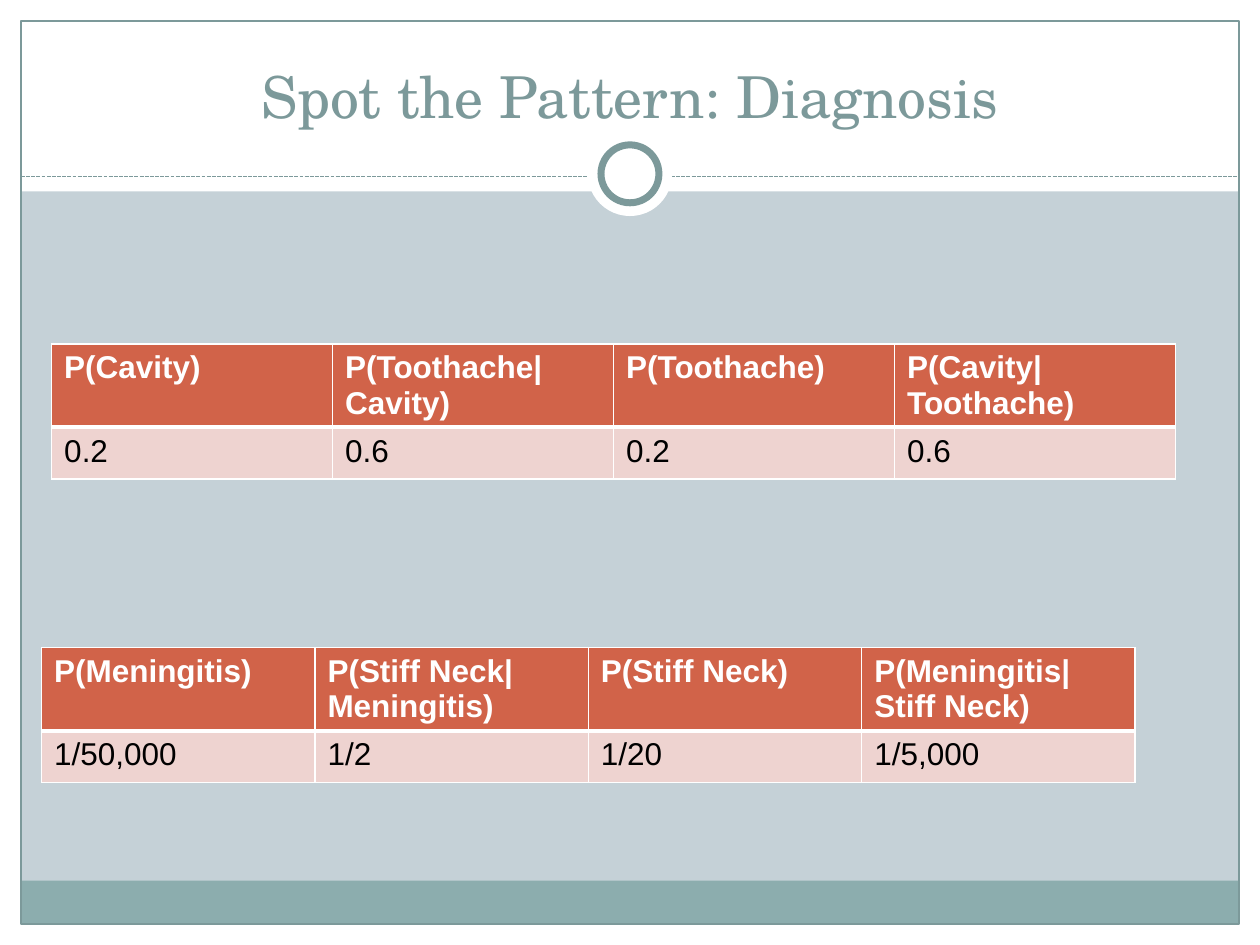
import pptx
import pptx.util
import pptx.dml.color
import pptx.enum.dml
import pptx.enum.shapes
import pptx.enum.text
import pptx.oxml
import pptx.oxml.ns

RGB = pptx.dml.color.RGBColor
WHITE = RGB(0xFF, 0xFF, 0xFF)
BLACK = RGB(0, 0, 0)
MIST = RGB(0xC5, 0xD1, 0xD7)
TEAL = RGB(0x8C, 0xAD, 0xAE)
SLATE = RGB(0x7C, 0x99, 0x9A)
RUST = RGB(0xD1, 0x63, 0x49)
BLUSH = RGB(0xEE, 0xD3, 0xD0)
Inches, Pt = pptx.util.Inches, pptx.util.Pt
KIND = pptx.enum.shapes.MSO_SHAPE
W, H = 10, 7.5
EDGE = W / 60

deck = pptx.Presentation()
deck.slide_width, deck.slide_height = Inches(W), Inches(H)
slide = deck.slides.add_slide(deck.slide_layouts[5])
slide.background.fill.solid()
slide.background.fill.fore_color.rgb = MIST


def draw(kind, box, fill=None, line=None, width=0.75):
    shape = slide.shapes.add_shape(kind, *map(Inches, box))
    shape.shadow.inherit = False
    for part, color in ((shape.fill, fill), (shape.line.fill, line)):
        if color is None:
            part.background()
        else:
            part.solid()
            part.fore_color.rgb = color
    if line is not None:
        shape.line.width = Pt(width)


def style(font, form):
    for key, value in form.items():
        if key == "color":
            font.color.rgb = value
        else:
            setattr(font, key, value)


# White margins, footer band and frame
for box, color in (
    ((0, H - EDGE, W, EDGE), WHITE),
    ((0, 0, W, 1.52), WHITE),
    ((0, 0, EDGE, H), WHITE),
    ((W - EDGE, 0, EDGE, H), WHITE),
    ((EDGE, 6.99, W - 2 * EDGE, 0.34), TEAL),
):
    draw(KIND.RECTANGLE, box, color)
draw(KIND.RECTANGLE, (EDGE, EDGE, W - 2 * EDGE, H - 2 * EDGE), line=SLATE)

# Dashed rule
rule = slide.shapes.add_connector(
    pptx.enum.shapes.MSO_CONNECTOR.STRAIGHT,
    *map(Inches, (EDGE, 1.4, W - EDGE, 1.4)))
rule.line.color.rgb = SLATE
rule.line.width = Pt(0.75)
rule.line.dash_style = pptx.enum.dml.MSO_LINE.SQUARE_DOT
pptx.oxml.ns.qn("a:effectLst")
rule._element.spPr.append(pptx.oxml.parse_xml(
    "<a:effectLst %s/>" % pptx.oxml.ns.nsdecls("a")))

# Ring on the rule
for size, line in ((0.67, None), (0.46, SLATE)):
    box = ((W - size) / 2, 1.38 - size / 2, size, size)
    draw(KIND.OVAL, box, WHITE, line, 4)

# Title, brought in front of the white band
title = slide.shapes.title
place = {"left": W / 30, "top": H / 30, "width": W * 28 / 30, "height": H / 9}
for key, value in place.items():
    setattr(title, key, Inches(value))
slide.shapes._spTree.append(title._element)
frame = title.text_frame
frame.text = "Spot the Pattern: Diagnosis"
frame.vertical_anchor = pptx.enum.text.MSO_ANCHOR.BOTTOM
frame.auto_size = pptx.enum.text.MSO_AUTO_SIZE.NONE
frame.paragraphs[0].alignment = pptx.enum.text.PP_ALIGN.CENTER
style(frame.paragraphs[0].runs[0].font,
      {"name": "TeX Gyre Schola", "size": Pt(33), "color": SLATE})

# Probability tables
HEAD = {"name": "Arial", "size": Pt(18), "bold": True, "color": WHITE}
BODY = {**HEAD, "bold": False, "color": BLACK}
LOOKS = ((RUST, HEAD, {"L": 1, "R": 1, "T": 1, "B": 3}),
         (BLUSH, BODY, {"L": 1, "R": 1, "T": 3, "B": 1}))
BORDER = ('<a:ln%s %s w="%d"><a:solidFill><a:srgbClr val="%s"/>'
          '</a:solidFill></a:ln%s>')
TABLES = (
    (0.41, 2.73, 2.23, (
        ("P(Cavity)", "P(Toothache|Cavity)", "P(Toothache)",
         "P(Cavity|Toothache)"),
        ("0.2", "0.6", "0.2", "0.6"))),
    (0.33, 5.14, 2.17, (
        ("P(Meningitis)", "P(Stiff Neck| Meningitis)", "P(Stiff Neck)",
         "P(Meningitis|Stiff Neck)"),
        ("1/50,000", "1/2", "1/20", "1/5,000"))),
)
for left, top, col, rows in TABLES:
    holder = slide.shapes.add_table(
        2, 4, *map(Inches, (left, top, 4 * col, 1.11)))
    grid = holder.table
    for r, (row, (fill, form, sides)) in enumerate(zip(rows, LOOKS)):
        grid.rows[r].height = Inches(0.41)
        for c, text in enumerate(row):
            cell = grid.cell(r, c)
            cell.text = text
            style(cell.text_frame.paragraphs[0].runs[0].font, form)
            props = cell._tc.get_or_add_tcPr()
            for side, width in sides.items():
                props.append(pptx.oxml.parse_xml(BORDER % (
                    side, pptx.oxml.ns.nsdecls("a"), Pt(width), WHITE, side)))
            cell.fill.solid()
            cell.fill.fore_color.rgb = fill
    holder.height = Inches(1.11)

deck.save("out.pptx")
